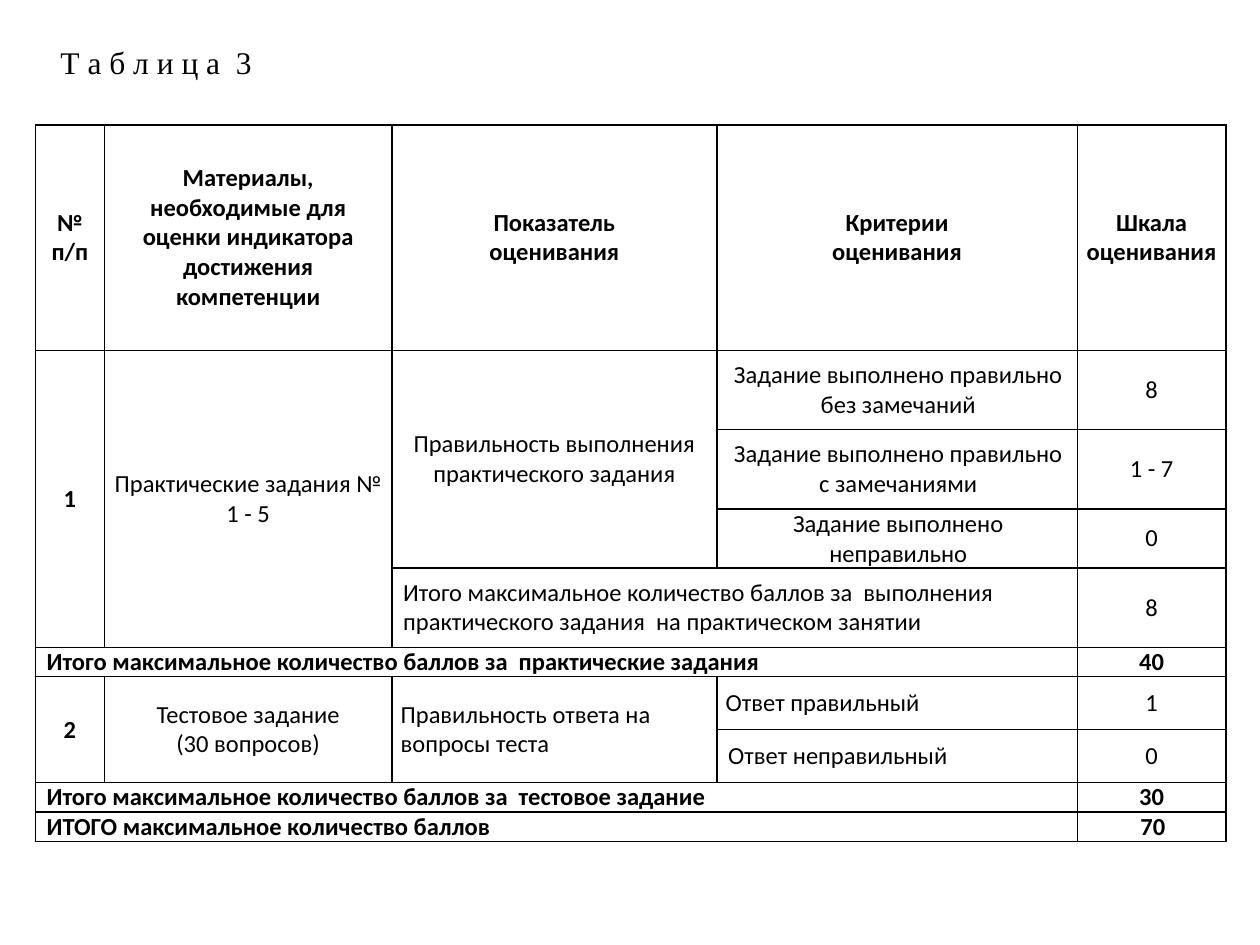
from lxml.etree import SubElement
from pptx import Presentation
from pptx.dml.color import RGBColor
from pptx.enum.text import MSO_ANCHOR, MSO_AUTO_SIZE, PP_ALIGN
from pptx.oxml.ns import qn
from pptx.util import Inches, Pt

COLORS = {"ink": "000000", "paper": "FFFFFF"}
CENTER, LEFT = PP_ALIGN.CENTER, PP_ALIGN.LEFT
COLUMN_WIDTHS = [0.55, 2.28, 2.58, 2.86, 1.18]
ROW_HEIGHTS = [1.79, 0.63, 0.63, 0.42, 0.63, 0.21, 0.42, 0.42, 0.21, 0.21]
HEADERS = [
    "№\nп/п",
    "Материалы, необходимые для оценки индикатора достижения компетенции",
    "Показатель\nоценивания",
    "Критерии\nоценивания",
    "Шкала оценивания",
]
SCORES = ["8", "1 - 7", "0", "8", "40", "1", "0", "30", "70"]
# row, column, rows spanned, columns spanned, text, bold, alignment, indent
BODY = [
    (1, 0, 4, 1, "1", True, CENTER, 0),
    (1, 1, 4, 1, "Практические задания № 1 - 5", False, CENTER, 0),
    (1, 2, 3, 1, "Правильность выполнения практического задания", False, CENTER, 0),
    (1, 3, 1, 1, "Задание выполнено правильно без замечаний", False, CENTER, 0.02),
    (2, 3, 1, 1, "Задание выполнено правильно с замечаниями", False, CENTER, 0.02),
    (3, 3, 1, 1, "Задание выполнено неправильно", False, CENTER, 0.02),
    (4, 2, 1, 2, "Итого максимальное количество баллов за  выполнения "
     "практического задания  на практическом занятии", False, LEFT, 0.02),
    (5, 0, 1, 4, "Итого максимальное количество баллов за  практические задания",
     True, LEFT, 0.02),
    (6, 0, 2, 1, "2", True, CENTER, 0),
    (6, 1, 2, 1, "Тестовое задание\n(30 вопросов)", False, CENTER, 0),
    (6, 2, 2, 1, "Правильность ответа на вопросы теста", False, LEFT, 0),
    (6, 3, 1, 1, "Ответ правильный", False, LEFT, 0),
    (7, 3, 1, 1, "Ответ неправильный", False, LEFT, 0.02),
    (8, 0, 1, 4, "Итого максимальное количество баллов за  тестовое задание",
     True, LEFT, 0.02),
    (9, 0, 1, 4, "ИТОГО максимальное количество баллов", True, LEFT, 0.02),
]
TOTAL_ROWS = (5, 8, 9)


def set_font(font, name, size, bold=False):
    font.name, font.size, font.bold = name, Pt(size), bold
    font.color.rgb = RGBColor.from_string(COLORS["ink"])


def indent_paragraph(para, inches):
    properties = para._p.get_or_add_pPr()
    properties.set("marL", str(Inches(inches)))
    properties.set("indent", "0")


def add_borders(cell):
    properties = cell._tc.get_or_add_tcPr()
    for index, side in enumerate(("a:lnL", "a:lnR", "a:lnT", "a:lnB")):
        line = SubElement(properties, qn(side), w=str(Pt(1)))
        fill = SubElement(line, qn("a:solidFill"))
        SubElement(fill, qn("a:srgbClr"), val=COLORS["ink"])
        properties.insert(index, line)


def format_cell(cell):
    cell.margin_left = cell.margin_right = Inches(0.07)
    cell.margin_top = cell.margin_bottom = 0
    cell.vertical_anchor = MSO_ANCHOR.MIDDLE
    cell.fill.solid()
    cell.fill.fore_color.rgb = RGBColor.from_string(COLORS["paper"])
    add_borders(cell)
    set_font(cell.text_frame.paragraphs[0].font, "Calibri", 14)


def write_cell(cell, text, bold=False, alignment=CENTER, indent=0):
    cell.text = text
    for para in cell.text_frame.paragraphs:
        para.alignment = alignment
        indent_paragraph(para, indent)
        set_font(para.font, "Calibri", 14, bold)


def place_caption(title, left, top, width, height):
    title.left, title.top = Inches(left), Inches(top)
    title.width, title.height = Inches(width), Inches(height)
    frame = title.text_frame
    frame.text = "Т а б л и ц а  3"
    frame.word_wrap = False
    frame.auto_size = MSO_AUTO_SIZE.SHAPE_TO_FIT_TEXT
    frame.vertical_anchor = MSO_ANCHOR.TOP
    para = frame.paragraphs[0]
    para.alignment = PP_ALIGN.JUSTIFY
    indent_paragraph(para, 0.5)
    set_font(para.runs[0].font, "Times New Roman", 18)


def add_grading_table(page, left, top, width):
    """Fit the columns to the width; the rows keep their own heights."""
    table = page.shapes.add_table(
        len(ROW_HEIGHTS), len(COLUMN_WIDTHS), Inches(left), Inches(top),
        Inches(width), Inches(sum(ROW_HEIGHTS))).table
    scale = width / sum(COLUMN_WIDTHS)
    for column, share in zip(table.columns, COLUMN_WIDTHS):
        column.width = Inches(share * scale)
    for row, height in zip(table.rows, ROW_HEIGHTS):
        row.height = Inches(height)
    for cell in table.iter_cells():
        format_cell(cell)
    for column, text in enumerate(HEADERS):
        write_cell(table.cell(0, column), text, bold=True)
    for row, column, rows, columns, *content in BODY:
        cell = table.cell(row, column)
        if rows * columns > 1:
            cell.merge(table.cell(row + rows - 1, column + columns - 1))
        write_cell(cell, *content)
    last = len(COLUMN_WIDTHS) - 1
    for row, score in enumerate(SCORES, start=1):
        indent = 0.02 if row == len(SCORES) else 0
        write_cell(table.cell(row, last), score, row in TOTAL_ROWS, CENTER, indent)


def main():
    deck = Presentation()
    deck.slide_width, deck.slide_height = Inches(10), Inches(7.5)
    page = deck.slides.add_slide(deck.slide_layouts[5])
    place_caption(page.shapes.title, -0.12, 0.29, 2.24, 0.4)
    add_grading_table(page, 0.28, 0.99, 9.45)
    deck.save("out.pptx")


if __name__ == "__main__":
    main()
